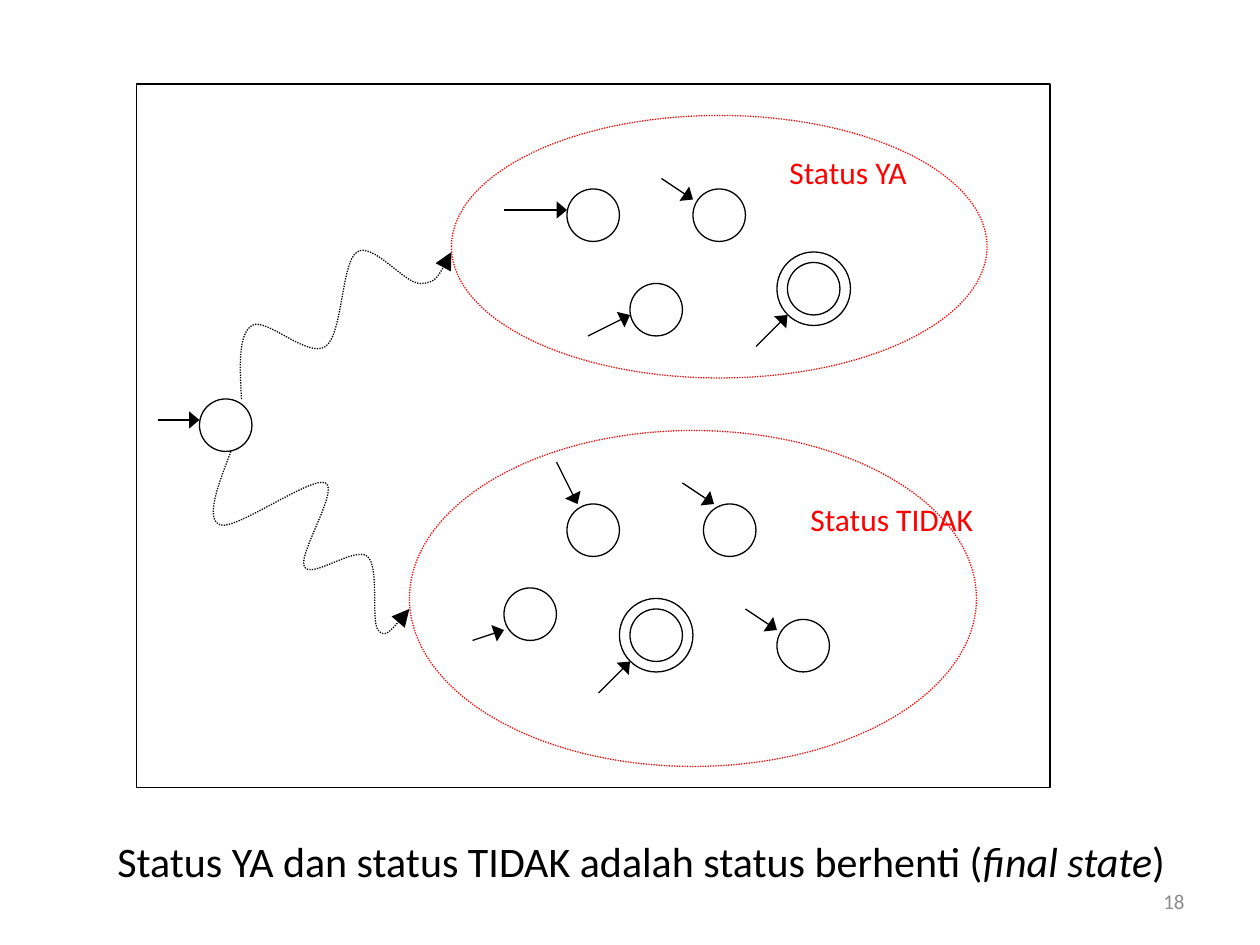
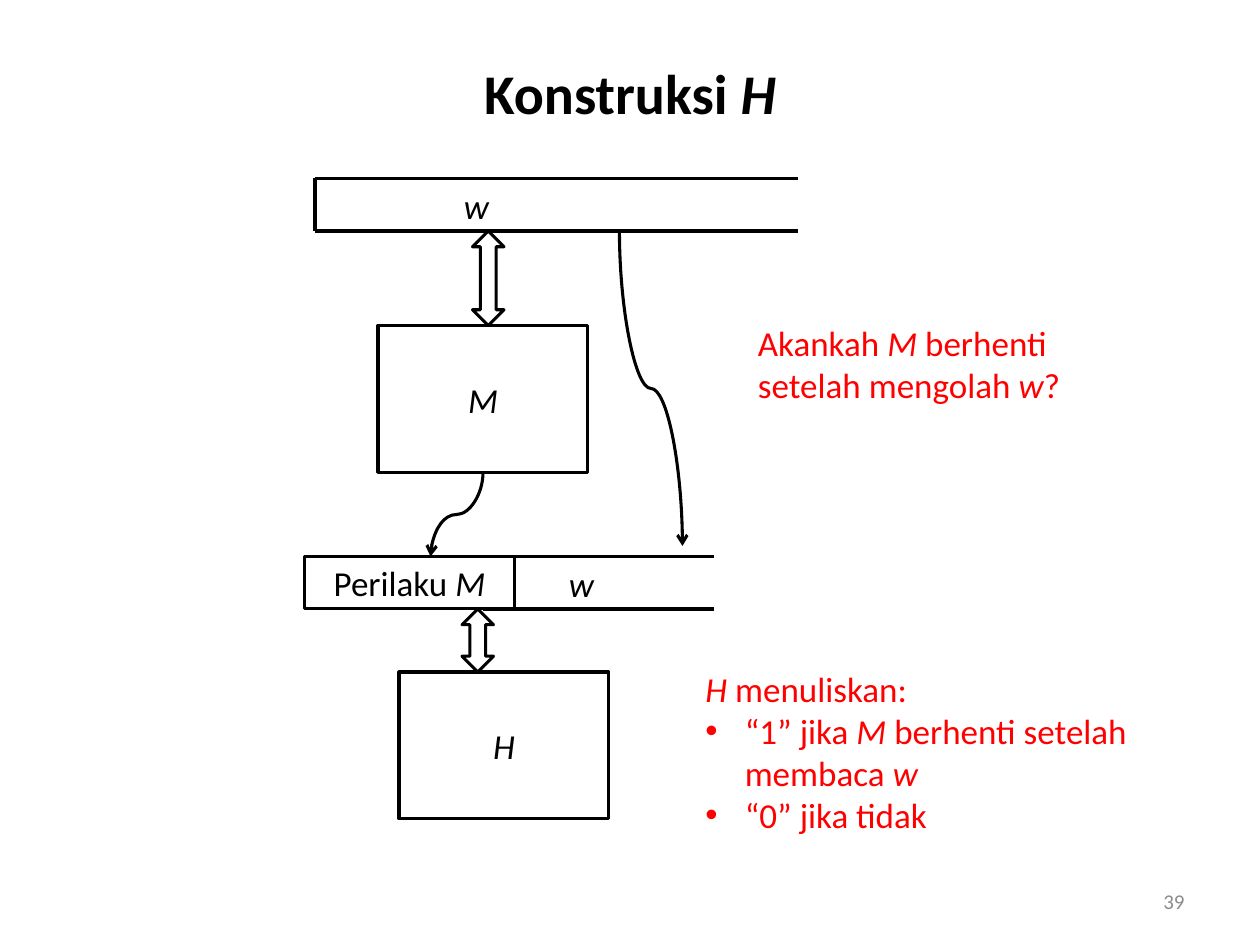
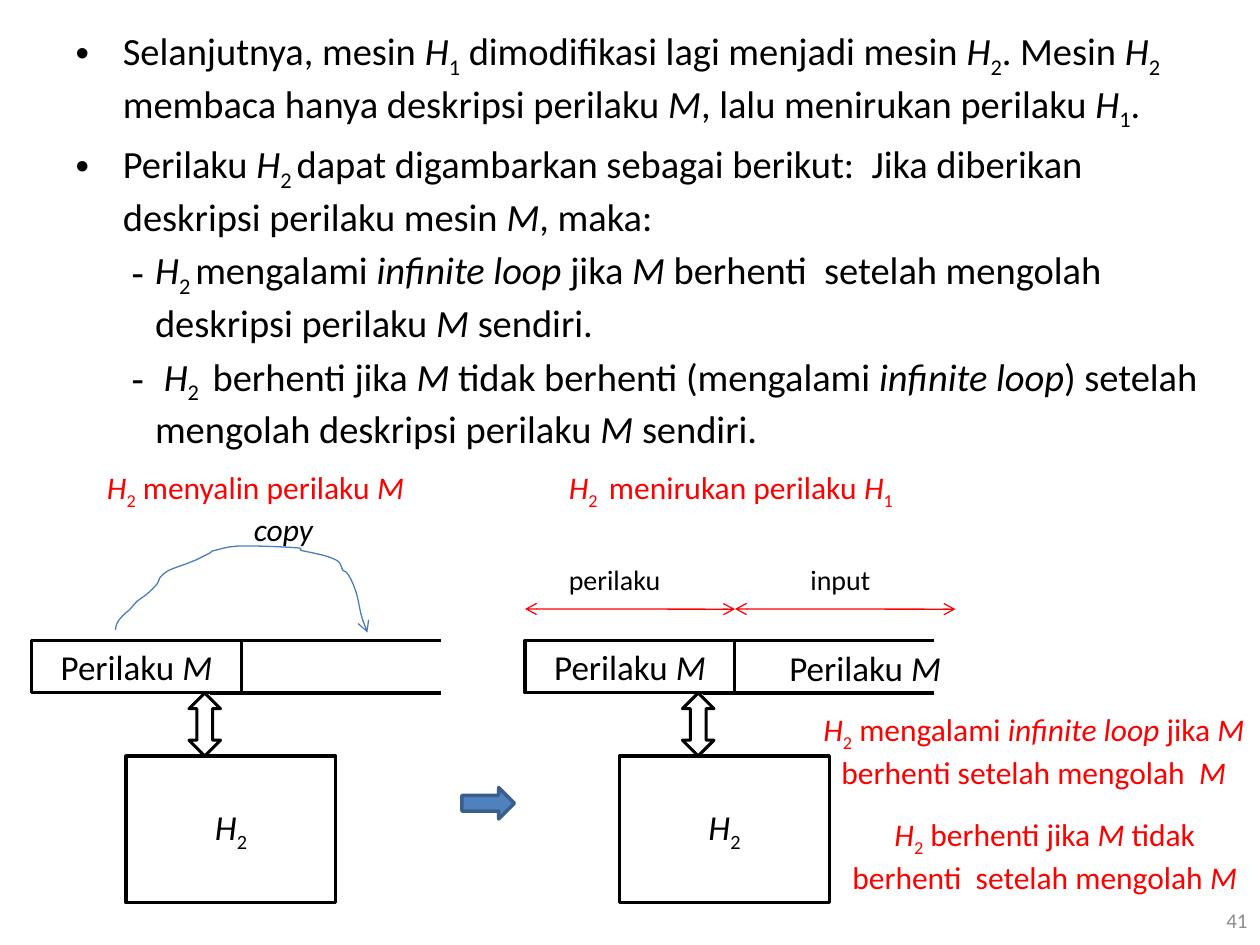
"""Build three slides on Turing machine states and the halting problem."""
from itertools import pairwise, zip_longest

from lxml import etree
from pptx import Presentation
from pptx.dml.color import RGBColor
from pptx.enum.dml import MSO_LINE
from pptx.enum.shapes import MSO_CONNECTOR, MSO_SHAPE
from pptx.enum.text import MSO_ANCHOR, PP_ALIGN
from pptx.oxml.ns import qn
from pptx.util import Pt

FONT = "Calibri"
BULLET_FONT = "Arial"
COLORS = {"black": "000000", "red": "FF0000", "gray": "8C8C8C",
          "blue": "4F81BD", "blue edge": "3A5F8C", "blue line": "4B7EBC"}
LEFT, CENTER, RIGHT = PP_ALIGN.LEFT, PP_ALIGN.CENTER, PP_ALIGN.RIGHT
MIDDLE = MSO_ANCHOR.MIDDLE
STRAIGHT, CURVE = MSO_CONNECTOR.STRAIGHT, MSO_CONNECTOR.CURVE
RECTANGLE, OVAL = MSO_SHAPE.RECTANGLE, MSO_SHAPE.OVAL
UP_DOWN_ARROW, RIGHT_ARROW = MSO_SHAPE.UP_DOWN_ARROW, MSO_SHAPE.RIGHT_ARROW
DOTTED = MSO_LINE.ROUND_DOT
THICK = 1.75
OPEN_TIP = {"type": "arrow"}
WIDE_TIP = {"type": "triangle", "w": "lg"}
LARGE_TIP = {"type": "triangle", "w": "lg", "len": "lg"}


def write(box, text, size=20, color="black", align=LEFT, bold=False, bullets=()):
    """Fill a box line by line; *text* is italic and _text_ is subscript."""
    frame = box.text_frame
    frame.word_wrap = True
    for index, (line, bullet) in enumerate(zip_longest(text.split("\n"), bullets)):
        para = frame.add_paragraph() if index else frame.paragraphs[0]
        para.alignment = align
        if not index:
            para.space_before = Pt(0)
        if bullet:
            symbol, margin, hanging = bullet
            properties = para._p.get_or_add_pPr()
            properties.set("marL", str(Pt(margin)))
            properties.set("indent", str(-Pt(hanging)))
            etree.SubElement(properties, qn("a:buFont"), typeface=BULLET_FONT)
            etree.SubElement(properties, qn("a:buChar"), char=symbol)
        for part, stretch in enumerate(line.split("*")):
            for piece, words in enumerate(stretch.split("_")):
                if not words:
                    continue
                span = para.add_run()
                span.text = words
                span.font.name = FONT
                span.font.size = Pt(size)
                span.font.bold = bold
                span.font.italic = part % 2 == 1
                span.font.color.rgb = RGBColor.from_string(COLORS[color])
                if piece % 2:
                    span.font._element.set("baseline", "-25000")


def outline(item, color="black", width=0.75, dash=None, head=None, tail=None):
    """Give a shape or line its stroke and arrowheads, without fill or shadow."""
    if hasattr(item, "fill"):
        item.fill.background()
    item.line.color.rgb = RGBColor.from_string(COLORS[color])
    item.line.width = Pt(width)
    if dash:
        item.line.dash_style = dash
    properties = item._element.spPr
    stroke = properties.find(qn("a:ln"))
    for tag, tip in (("a:headEnd", head), ("a:tailEnd", tail)):
        if tip:
            etree.SubElement(stroke, qn(tag), tip)
    etree.SubElement(properties, qn("a:effectLst"))


deck = Presentation()
deck.slide_width, deck.slide_height = Pt(720), Pt(540)
states_page, construction_page, copy_page = [
    deck.slides.add_slide(deck.slide_layouts[layout]) for layout in (6, 5, 1)]

# Title and list
title = construction_page.shapes.title
title.left, title.top, title.width, title.height = map(Pt, (36, 28.5, 648, 48))
write(title, "Konstruksi *H*", size=32, align=CENTER, bold=True)

unused_title = copy_page.shapes.title._element
unused_title.getparent().remove(unused_title)
body = copy_page.placeholders[1]
body.left, body.top, body.width, body.height = map(Pt, (36, 12, 660, 486))
write(body, "Selanjutnya, mesin *H*_1_ dimodifikasi lagi menjadi mesin *H*_2_. Mesin "
            "*H*_2_ membaca hanya deskripsi perilaku *M*, lalu menirukan perilaku "
            "*H*_1_.\n"
            "Perilaku *H*_2 _dapat digambarkan sebagai berikut:  Jika diberikan "
            "deskripsi perilaku mesin *M*, maka:\n"
            "*H*_2 _mengalami *infinite loop *jika *M *berhenti  setelah mengolah "
            "deskripsi perilaku *M *sendiri.\n"
            " *H*_2 _ berhenti jika *M *tidak berhenti (mengalami *infinite loop*) "
            "setelah mengolah deskripsi perilaku *M *sendiri.",
      size=22, bullets=[("•", 27, 27)] * 2 + [("-", 45.4, 13.5)] * 2)

# State space
shapes = states_page.shapes
outline(shapes.add_shape(RECTANGLE, *map(Pt, (78, 48, 522, 402))))
states = [(324, 108), (396, 108), (360, 162), (450, 150), (324, 288),
          (360, 348), (402, 288), (444, 354), (288, 336), (114, 228)]
final_rings = [(354, 342), (444, 144)]
for diameter, corners in ((30, states), (42, final_rings)):
    for left, top in corners:
        outline(shapes.add_shape(OVAL, *map(Pt, (left, top, diameter, diameter))))
for region in ((258, 66, 306, 150), (234, 246, 324, 192)):
    outline(shapes.add_shape(OVAL, *map(Pt, region)), color="red", dash=DOTTED)
for entry in ((90, 240, 114, 240), (288, 120, 324, 120), (336, 192, 360, 180),
              (378, 102, 396, 114), (432, 198, 450, 180), (318, 264, 330, 288),
              (390, 276, 408, 288), (270, 366, 288, 360), (342, 396, 360, 378),
              (426, 348, 444, 360)):
    outline(shapes.add_connector(STRAIGHT, *map(Pt, entry)), tail=WIDE_TIP)

# Smooth curves through given points
to_yes = [(138, 228), (144, 186), (186, 198), (204, 144), (240, 162), (258, 144)]
to_no = [(132, 258), (126, 300), (186, 276), (174, 324), (210, 318), (216, 360),
         (234, 348)]
copy_arc = [(66, 360), (67, 356), (70, 352), (74, 348.5), (78.5, 343.5),
            (84, 339.5), (90, 333.5), (91.5, 330), (96.5, 326), (107, 322),
            (112, 320), (120, 316), (123, 314.5), (137.5, 312), (169, 313),
            (172, 314.5), (179, 316), (187, 318), (193.5, 321), (196, 326),
            (198, 327), (201, 332), (204, 340), (206.5, 351.5), (210, 361.5)]
for page, points, stroke in (
        (states_page, to_yes, {"dash": DOTTED, "tail": LARGE_TIP}),
        (states_page, to_no, {"dash": DOTTED, "tail": LARGE_TIP}),
        (copy_page, copy_arc, {"color": "blue line", "tail": OPEN_TIP})):
    builder = page.shapes.build_freeform(*map(Pt, points[0]))
    builder.add_line_segments([(Pt(x), Pt(y)) for x, y in points[1:]], close=False)
    curve = builder.convert_to_shape()
    outline(curve, **stroke)
    corner = complex(curve.left, curve.top)
    knots = [complex(Pt(x), Pt(y)) - corner for x, y in points]
    pulls = [(after - before) / 6 for before, after in zip(knots, knots[2:])]
    first_pull = (knots[1] - pulls[0] - knots[0]) / 2
    last_pull = (knots[-1] - knots[-2] - pulls[-1]) / 2
    pulls = [first_pull, *pulls, last_pull]
    segments = list(curve._element.iter(qn("a:lnTo")))
    for segment, (start, end), (leave, arrive) in zip(
            segments, pairwise(knots), pairwise(pulls)):
        bend = etree.Element(qn("a:cubicBezTo"))
        for spot in (start + leave, end - arrive, end):
            etree.SubElement(bend, qn("a:pt"),
                             x=str(round(spot.real)), y=str(round(spot.imag)))
        segment.getparent().replace(segment, bend)

# Input tape and machine M
shapes = construction_page.shapes
for edge in ((180, 102, 456, 102), (180, 102, 180, 132), (180, 132, 456, 132)):
    outline(shapes.add_connector(STRAIGHT, *map(Pt, edge)), width=THICK)
machine = shapes.add_shape(RECTANGLE, *map(Pt, (216, 186, 120, 84)))
outline(machine, width=THICK)
write(machine, "*M*", align=CENTER)
outline(shapes.add_shape(UP_DOWN_ARROW, *map(Pt, (270, 132, 18, 54))), width=THICK)
for *ends, turn in ((237, 279, 285, 309, 90), (462, 204, 282, 240, 270)):
    link = shapes.add_connector(CURVE, *map(Pt, ends))
    link._element.spPr.xfrm.set("rot", str(turn * 60000))
    outline(link, width=THICK, tail=OPEN_TIP)

# Tapes that hold the behaviour of M, each with its machine below
for page, left, top, name in ((construction_page, 174, 318, "*H*"),
                              (copy_page, 18, 366, "*H*_2_"),
                              (copy_page, 300, 366, "*H*_2_")):
    shapes = page.shapes
    for label, x, y, height in (("Perilaku* M*", left, top, 30),
                                (name, left + 54, top + 66, 84)):
        box = shapes.add_shape(RECTANGLE, *map(Pt, (x, y, 120, height)))
        outline(box, width=THICK)
        write(box, label, align=CENTER)
    bottom, right = top + 30, left + 234
    for *ends, width in ((left + 102, bottom, right, bottom, THICK),
                         (left + 108, top, right, top, THICK),
                         (left + 120, top, left + 120, bottom, 0.75)):
        outline(shapes.add_connector(STRAIGHT, *map(Pt, ends)), width=width)
    head_arrow = shapes.add_shape(UP_DOWN_ARROW, *map(Pt, (left + 90, bottom, 18, 36)))
    outline(head_arrow, width=THICK)

# Step arrow and tape measures
step_arrow = copy_page.shapes.add_shape(RIGHT_ARROW, *map(Pt, (264, 450, 30, 18)))
outline(step_arrow, color="blue edge", width=2)
step_arrow.fill.solid()
step_arrow.fill.fore_color.rgb = RGBColor.from_string(COLORS["blue"])
for start, end in ((300, 420), (420, 546)):
    measure = copy_page.shapes.add_connector(
        STRAIGHT, *map(Pt, (start, 348, end, 348.12)))
    outline(measure, color="red", head=OPEN_TIP, tail=OPEN_TIP)

# Labels and notes
red_label = {"size": 18, "color": "red"}
red_note = {**red_label, "align": CENTER}
for page, place, text, style in (
        (states_page, (444, 84, 84, 29), "Status YA", red_label),
        (states_page, (456, 282, 114, 29), "Status TIDAK", red_label),
        (states_page, (60, 474, 618, 36),
         "Status YA dan status TIDAK adalah status berhenti (*final state*)",
         {"size": 24}),
        (construction_page, (258, 102, 30, 32), "*w*", {}),
        (construction_page, (318, 318, 67, 32), "*w*", {}),
        (construction_page, (426, 180, 198, 56),
         "Akankah *M *berhenti\nsetelah mengolah *w*?", {"color": "red"}),
        (construction_page, (396, 378, 270, 104),
         "*H *menuliskan:\n“1” jika *M *berhenti setelah membaca *w*\n"
         "“0” jika tidak",
         {"color": "red", "bullets": [None] + [("•", 22.5, 22.5)] * 2}),
        (copy_page, (138, 288, 54, 29), "*copy*", {"size": 18}),
        (copy_page, (54, 264, 192, 29), "*H*_2_ menyalin perilaku *M*", red_label),
        (copy_page, (318, 264, 216, 29), "*H*_2 _ menirukan perilaku *H*_1_", red_label),
        (copy_page, (318, 318, 72, 27), "perilaku", {"size": 16}),
        (copy_page, (456, 318, 54, 27), "input", {"size": 16}),
        (copy_page, (444, 366, 114, 32), "Perilaku* M*", {}),
        (copy_page, (461.5, 402, 258.5, 51),
         "*H*_2_ mengalami *infinite loop *jika *M*\n"
         "berhenti setelah mengolah  *M*", red_note),
        (copy_page, (474, 462, 246, 51),
         "*H*_2_ berhenti jika *M *tidak berhenti  setelah mengolah *M*", red_note)):
    write(page.shapes.add_textbox(*map(Pt, place)), text, **style)

# Slide numbers
for page, left, top, number in ((states_page, 516, 500.5, "18"),
                                (construction_page, 516, 500.5, "39"),
                                (copy_page, 552, 511, "41")):
    box = page.shapes.add_textbox(*map(Pt, (left, top, 168, 29)))
    box.text_frame.vertical_anchor = MIDDLE
    write(box, number, size=12, color="gray", align=RIGHT)

deck.save("out.pptx")
